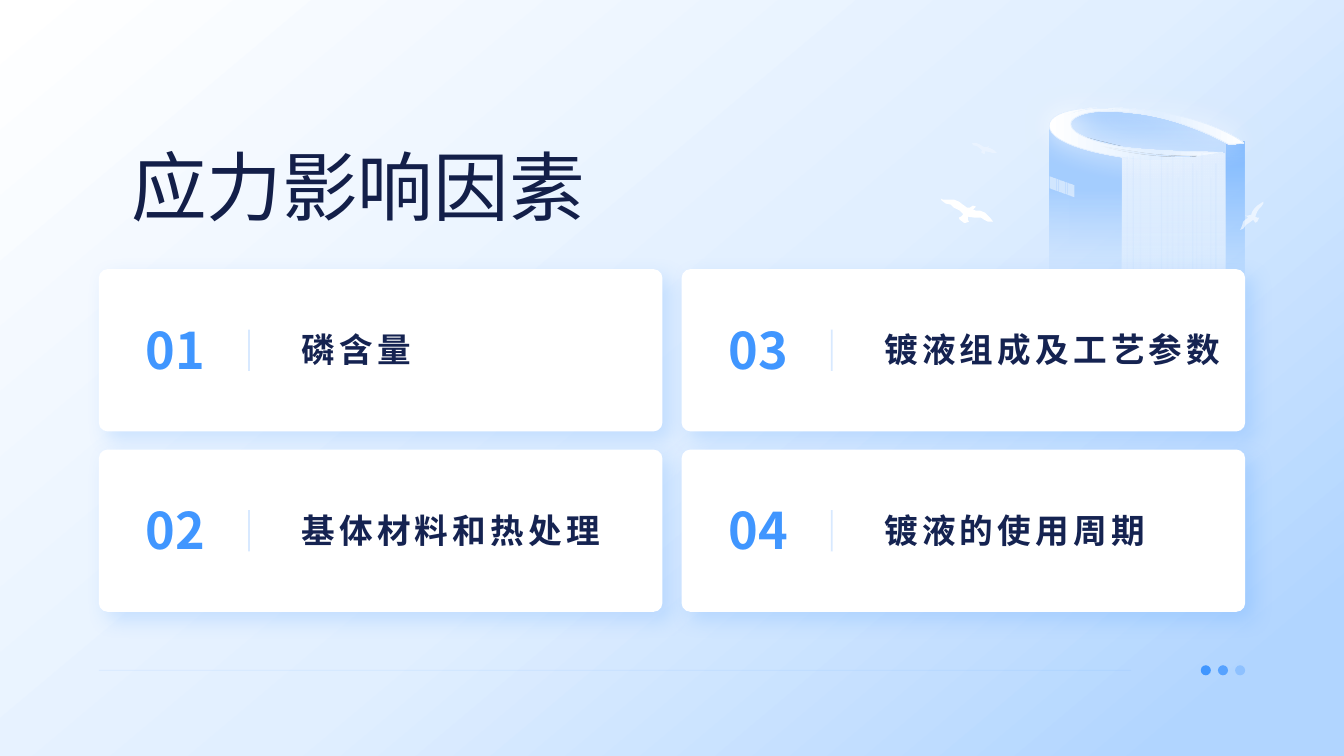
from lxml import etree
from pptx import Presentation
from pptx.dml.color import RGBColor
from pptx.enum import shapes, text
from pptx.oxml import parse_xml
from pptx.oxml.ns import nsdecls, qn
from pptx.util import Pt

PX = 9144


class Look:
    font = "Noto Sans CJK SC"
    white, pale, light, soft = "FFFFFF", "E1EFFF", "C3DEFF", "A5CEFF"
    deep, sky, rule, blue = "B1D5FF", "69ADFF", "B3D5FF", "4096FF"
    navy, ink = "131F49", "152351"
    title, number, label = 54, 36, 24


def paint(shape, *stops, angle=0, edge=None, glow=None):
    """Stops are (place, colour, alpha); edge is (colour, width, alpha);
    glow is (colour, alpha, blur, distance, angle)."""
    props = shape.element.spPr
    color = '<a:srgbClr val="{}"><a:alpha val="{}000"/></a:srgbClr>'.format
    if stops:
        if len(stops) == 1:
            fill = f'<a:solidFill {nsdecls("a")}>{color(*stops[0][1:])}</a:solidFill>'
        else:
            marks = "".join(f'<a:gs pos="{p}000">{color(c, a)}</a:gs>' for p, c, a in stops)
            fill = (f'<a:gradFill {nsdecls("a")} rotWithShape="1"><a:gsLst>{marks}</a:gsLst>'
                    f'<a:lin ang="{angle * 60000}" scaled="0"/></a:gradFill>')
        shape.fill.background()
        props.replace(props.find(qn("a:noFill")), parse_xml(fill))
    if edge:
        tint, width, alpha = edge
        shape.line.color.rgb = RGBColor.from_string(tint)
        shape.line.width = Pt(width)
        mark = props.xpath("a:ln//a:srgbClr")[0]
        etree.SubElement(mark, qn("a:alpha")).set("val", str(alpha * 1000))
    else:
        shape.line.fill.background()
    shade = ""
    if glow:
        tint, alpha, blur, dist, turn = glow
        shade = (f'<a:outerShdw blurRad="{Pt(blur)}" dist="{Pt(dist)}" dir="{turn * 60000}" '
                 f'algn="tl" rotWithShape="0">{color(tint, alpha)}</a:outerShdw>')
    props.append(parse_xml(f'<a:effectLst {nsdecls("a")}>{shade}</a:effectLst>'))


def write(box, words, size, color, bold=False, align=text.PP_ALIGN.LEFT,
          anchor=text.MSO_ANCHOR.MIDDLE, wrap=True, track=0, leading=None):
    frame = box.text_frame
    frame.margin_left = frame.margin_top = frame.margin_right = frame.margin_bottom = 0
    frame.auto_size = text.MSO_AUTO_SIZE.NONE
    frame.word_wrap = wrap
    frame.vertical_anchor = anchor
    para = frame.paragraphs[0]
    para.alignment = align
    para.line_spacing = leading
    run = para.add_run()
    run.text = words
    run.font.size, run.font.bold, run.font.name = Pt(size), bold, Look.font
    run.font.color.rgb = RGBColor.from_string(color)
    props = run.font._element
    etree.SubElement(props, qn("a:ea")).set("typeface", Look.font)
    if track:
        props.set("spc", str(track * 100))


deck = Presentation()
deck.slide_width, deck.slide_height = 1333 * PX, 750 * PX
slide = deck.slides.add_slide(deck.slide_layouts[5])
art = slide.shapes

# Backdrop
back = art.add_shape(shapes.MSO_SHAPE.RECTANGLE, 0, 0, deck.slide_width, deck.slide_height)
paint(back, (0, Look.white, 100), (52, Look.pale, 100), (92, Look.deep, 100), angle=50)

# Tower and birds: two numbers are a corner, six are a curve
tower = [
    ([(1217, 378), (1061, 378), (1061, 113), (1061, 113, 1071, 110, 1094, 109),
      (1167, 107, 1217, 143, 1217, 143)],
     [(50, Look.light, 0), (100, Look.soft, 100)], {"angle": 270}),
    ([(1112, 152), (1214, 152), (1214, 378), (1112, 378)],
     [(5, Look.pale, 0), (89, Look.pale, 100)], {"angle": 270}),
    ([(1112, 378), (1041, 378), (1041, 128), (1112, 146)],
     [(35, Look.light, 0), (76, Look.soft, 100)], {"angle": 270}),
    ([(1234, 378), (1217, 378), (1217, 143), (1234, 141)],
     [(35, Look.sky, 0), (100, Look.sky, 80)], {"angle": 270}),
]
roof = [
    ([(1213, 151), (1213, 151, 1162, 162, 1120, 157), (1081, 152, 1036, 140, 1041, 122),
      (1048, 104, 1105, 104, 1149, 111), (1193, 118, 1223, 133, 1234, 142),
      (1218, 144, 1218, 143, 1218, 143), (1218, 143, 1171, 116, 1122, 112),
      (1081, 107, 1067, 115, 1063, 120), (1060, 125, 1062, 137, 1114, 146),
      (1151, 151, 1213, 151, 1213, 151)],
     [(0, Look.white, 100), (56, Look.pale, 100), (100, Look.white, 100)],
     {"edge": (Look.pale, 0.47, 100), "glow": (Look.white, 80, 20, 0, 0)}),
    ([(1090, 145), (1090, 145, 1126, 155, 1175, 155), (1184, 155, 1187, 154, 1187, 154),
      (1187, 154, 1157, 155, 1124, 150), (1092, 146, 1090, 145, 1090, 145)],
     [(0, Look.pale, 0), (99, Look.light, 100)], {}),
    ([(1059, 114), (1059, 114, 1072, 108, 1092, 109), (1112, 109, 1126, 111, 1126, 111),
      (1126, 111, 1103, 108, 1095, 108), (1086, 108, 1073, 107, 1059, 114)],
     [(0, Look.pale, 46), (100, Look.pale, 100)], {}),
]
birds = [
    ([(964, 142), (969, 142), (973, 144), (976, 146), (978, 146), (981, 145), (980, 147),
      (982, 147), (986, 149), (989, 152), (985, 152), (982, 151), (977, 150), (977, 152),
      (976, 153), (973, 151), (974, 149), (969, 145), (965, 144)],
     [(0, Look.white, 30)], {}),
    ([(933, 197), (935, 198), (941, 198), (946, 198), (951, 200), (955, 203), (959, 206),
      (962, 206), (965, 204), (968, 205), (966, 207), (965, 208), (968, 209), (972, 209),
      (977, 211), (982, 216), (985, 220), (980, 220), (976, 218), (973, 216), (967, 216),
      (960, 215), (960, 218), (961, 220), (958, 221), (956, 221), (952, 218), (951, 216),
      (953, 215), (955, 213), (955, 212), (952, 209), (946, 206), (943, 203), (938, 202),
      (934, 199)],
     [(0, Look.white, 100)], {}),
    ([(1235, 214), (1237, 214), (1241, 213), (1242, 210), (1244, 207), (1247, 204),
      (1250, 202), (1253, 200), (1253, 202), (1251, 205), (1249, 207), (1247, 210),
      (1245, 215), (1247, 216), (1249, 216), (1247, 220), (1245, 221), (1243, 218),
      (1239, 221), (1236, 223), (1233, 227), (1230, 228), (1232, 224), (1233, 220),
      (1235, 218), (1238, 216), (1237, 215)],
     [(0, Look.white, 60)], {}),
]
for path, stops, style in tower + birds + roof:
    dots = [path[0]]
    for step in path[1:]:
        if len(step) == 2:
            dots.append(step)
            continue
        curve = [dots[-1], step[:2], step[2:4], step[4:]]
        for n in range(1, 17):
            t = n / 16
            parts = ((1 - t) ** 3, 3 * t * (1 - t) ** 2, 3 * t * t * (1 - t), t ** 3)
            dots.append(tuple(sum(w * p[k] for w, p in zip(parts, curve)) for k in (0, 1)))
    dots = [(x * PX, y * PX) for x, y in dots]
    pen = art.build_freeform(*dots[0], scale=1.0)
    pen.add_line_segments(dots[1:], close=True)
    paint(pen.convert_to_shape(), *stops, **style)

# Slats on the tower front
slats = [(x, 155, 306, Look.light) for x in (1118, 1131, 1141, 1174)]
slats += [(x, 152, 306, Look.light) for x in (1163, 1192)]
slats += [(x, 176, 308, Look.light) for x in (1169, 1201)]
slats += [(1158, 162, 280, Look.light), (1187, 169, 288, Look.light),
          (1152, 152, 306, Look.soft), (1124, 155, 306, Look.soft),
          (1183, 162, 280, Look.soft), (1206, 162, 280, Look.soft)]
lines = [(x, top, x, end, (tint, 1, 10)) for x, top, end, tint in slats]
lines.append((98, 665, 1122, 665, (Look.blue, 0.5, 10)))
for *ends, edge in lines:
    line = art.add_connector(shapes.MSO_CONNECTOR.STRAIGHT, *[v * PX for v in ends])
    paint(line, edge=edge)

# Row of small windows on the tower side
panes = art.build_freeform(1041 * PX, 175 * PX, scale=1.0)
for n in range(30):
    x, y = (1041 + n * 25 / 30) * PX, (175 + n * 9 / 30) * PX
    if n:
        panes.move_to(x, y)
    panes.add_line_segments([(x + PX / 2, y), (x + PX / 2, y + 12 * PX), (x, y + 12 * PX)])
paint(panes.convert_to_shape(), (0, Look.white, 50))

for n, alpha in enumerate((100, 80, 30)):
    dot = art.add_shape(shapes.MSO_SHAPE.OVAL, (1191 + 17 * n) * PX, 660 * PX, 10 * PX, 10 * PX)
    paint(dot, (0, Look.blue, alpha))

# Title, raised above the backdrop
title = art.title
title.left, title.top, title.width, title.height = [v * PX for v in (130, 112, 798, 118)]
write(title, "应力影响因素", Look.title, Look.navy, anchor=text.MSO_ANCHOR.BOTTOM, leading=0.9)
art.element.append(title.element)

# Cards, column by column
topics = ["磷含量", "基体材料和热处理", "镀液组成及工艺参数", "镀液的使用周期"]
for n, topic in enumerate(topics):
    col, row = divmod(n, 2)
    x, y = 98 + 578 * col, 267 + 179 * row
    card = art.add_shape(shapes.MSO_SHAPE.ROUNDED_RECTANGLE, x * PX, y * PX, 559 * PX, 161 * PX)
    card.adjustments[0] = 0.055
    paint(card, (0, Look.white, 100), glow=(Look.blue, 20, 15, 8, 45))
    bar = art.add_connector(shapes.MSO_CONNECTOR.STRAIGHT, (x + 149) * PX, (y + 101) * PX,
                            (x + 149) * PX, (y + 60) * PX)
    paint(bar, edge=(Look.rule, 1.25, 50))
    box = art.add_textbox((x + 28) * PX, (y + 39) * PX, 96 * PX, 81 * PX)
    write(box, f"{n + 1:02}", Look.number, Look.blue, bold=True,
          align=text.PP_ALIGN.CENTER, wrap=False)
    box = art.add_textbox((x + 201) * PX, (y + 23) * PX, 349 * PX, 113 * PX)
    write(box, topic, Look.label, Look.ink, bold=True, track=3)

deck.save("out.pptx")
